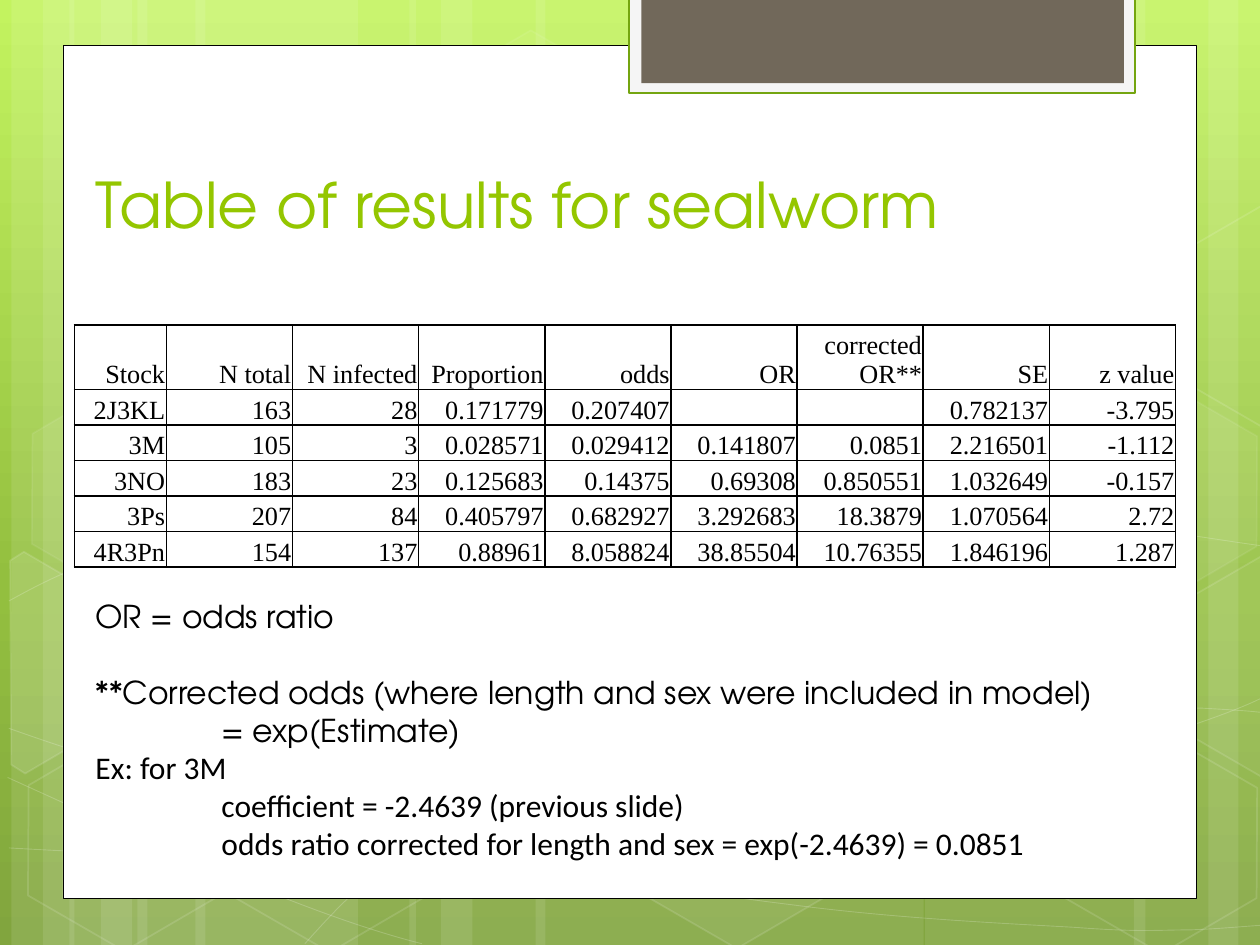
from copy import deepcopy
from lxml.etree import SubElement
from pptx import Presentation
from pptx.dml.color import RGBColor
from pptx.enum.shapes import MSO_SHAPE
from pptx.enum.text import MSO_ANCHOR, PP_ALIGN
from pptx.oxml.ns import qn
from pptx.util import Inches, Pt

WHITE = RGBColor(0xFF, 0xFF, 0xFF)
BLACK = RGBColor(0, 0, 0)
TITLE_GREEN = RGBColor(0x94, 0xC6, 0x00)
TAB_GREEN = RGBColor(0x74, 0xA5, 0x10)
TAB_GREY = RGBColor(0xF5, 0xF5, 0xF5)
TAB_BROWN = RGBColor(0x71, 0x68, 0x5A)
SKY = [(0, RGBColor(0xC3, 0xF3, 0x5F)), (0.62, RGBColor(0x93, 0xBF, 0x3F)),
       (1, RGBColor(0x81, 0xA5, 0x3E))]
HEADING_FONT = "TeX Gyre Adventor"


def paint(shape, fill=None, fill_alpha=100, line=None, width=1, line_alpha=100):
    shape.shadow.inherit = False
    for part, color, alpha in ((shape.fill, fill, fill_alpha), (shape.line.fill, line, line_alpha)):
        if color is None:
            part.background()
            continue
        part.solid()
        part.fore_color.rgb = color
        if alpha < 100:
            owner = shape._element.spPr if part is shape.fill else shape.line._ln
            tint = owner.find(qn("a:solidFill")).find(qn("a:srgbClr"))
            SubElement(tint, qn("a:alpha")).set("val", str(alpha * 1000))
    if line is not None:
        shape.line.width = Pt(width)


def outline(points, closed):
    corners = [(Inches(x), Inches(y)) for x, y in points]
    builder = slide.shapes.build_freeform(*corners[0])
    builder.add_line_segments(corners[1:], close=closed)
    return builder.convert_to_shape()


prs = Presentation()
prs.slide_width, prs.slide_height = Inches(10), Inches(7.5)
slide = prs.slides.add_slide(prs.slide_layouts[6])

sky = slide.background.fill
sky.gradient()
sky.gradient_angle = 270
stop_list = slide.background._cSld.find(".//" + qn("a:gsLst"))
stop_list.append(deepcopy(stop_list[-1]))
for stop, (position, color) in zip(sky.gradient_stops, SKY):
    stop.position = position
    stop.color.rgb = color

bands = [(1.09, 1.75), (0.09, 0.5), (0.34, 0.83), (1.55, 1.75), (0.55, 0.5), (0.8, 0.83),
         (7.34, 1.75), (9.59, 0.5), (9, 0.83), (4.25, 3.08), (3.25, 0.5), (3.5, 0.83)]
for left, width in bands:
    band = slide.shapes.add_shape(MSO_SHAPE.RECTANGLE, Inches(left), 0, Inches(width), Inches(7.5))
    paint(band, WHITE, 10)

waves = [
    [[(0.07, 6.73)], [(0.61, 6.76), (1.15, 6.79), (1.9, 6.78)], [(2.65, 6.77), (3.58, 6.75), (4.58, 6.65)],
     [(5.58, 6.55), (7, 6.36), (7.92, 6.17)], [(8.83, 5.98), (9.77, 5.68), (10.07, 5.51)]],
    [[(0.07, 4.77)], [(0.36, 4.61), (0.65, 4.46), (1.21, 4.31)], [(1.78, 4.16), (2.59, 3.94), (3.47, 3.87)],
     [(4.36, 3.8), (5.44, 3.79), (6.54, 3.87)], [(7.64, 3.95), (9.47, 4.26), (10.07, 4.34)]],
    [[(0.06, 6.17)], [(1.27, 6.72), (2.47, 7.27), (3.35, 7.49)]],
    [[(0.07, 5.78)], [(0.38, 5.89), (0.7, 6), (1.28, 6.16)], [(1.86, 6.31), (2.73, 6.56), (3.57, 6.73)],
     [(4.4, 6.9), (5.45, 7.08), (6.28, 7.18)], [(7.11, 7.29), (8, 7.33), (8.53, 7.36)],
     [(9.06, 7.4), (9.19, 7.38), (9.45, 7.38)], [(9.71, 7.37), (9.89, 7.35), (10.07, 7.34)]],
    [[(2.42, 7.49)], [(2.6, 7.29), (2.78, 7.09), (3.02, 6.91)], [(3.26, 6.72), (3.6, 6.53), (3.88, 6.39)],
     [(4.16, 6.25), (4.33, 6.19), (4.69, 6.09)], [(5.06, 5.99), (5.73, 5.85), (6.08, 5.78)],
     [(6.44, 5.71), (6.49, 5.71), (6.8, 5.69)], [(7.11, 5.66), (7.6, 5.63), (7.94, 5.62)],
     [(8.29, 5.61), (8.86, 5.62), (8.86, 5.62)], [(9.53, 5.62)],
     [(9.71, 5.63), (9.88, 5.64), (9.97, 5.65)], [(10.06, 5.66), (10.03, 5.65), (10.06, 5.66)]],
]
for segments in waves:
    wave = outline(sum(segments, []), False)
    track = wave._element.find(".//" + qn("a:path"))
    steps = iter(track.findall(qn("a:lnTo")))
    for segment in segments[1:]:
        pieces = [next(steps) for _ in segment]
        if len(pieces) == 3:
            bend = SubElement(track, qn("a:cubicBezTo"))
            for piece in pieces:
                bend.append(piece[0])
                track.remove(piece)
        else:
            track.append(pieces[0])
    paint(wave, line=WHITE, width=0.5, line_alpha=20)

hexagons = [(3.34, 0.36, 4, 8), (4.97, 5.89, 6, 12), (0.11, 5.91, 0, 12), (0.14, 3.12, 7, 8),
            (1.74, 5.92, 0, 12), (7.53, 4.53, 10, 12), (8.34, 5.93, 0, 12), (8.34, 3.14, 7, 8)]
for left, top, fill_alpha, line_alpha in hexagons:
    hexagon = slide.shapes.add_shape(MSO_SHAPE.HEXAGON, Inches(left), Inches(top), Inches(1.75), Inches(1.52))
    hexagon.adjustments[0] = 0.285
    hexagon.rotation = 30
    paint(hexagon, WHITE if fill_alpha else None, fill_alpha, WHITE, 1, line_alpha)

cut_hexagons = [
    ([(0.08, 4.45), (0.19, 4.38), (0.96, 4.83), (0.95, 5.7), (0.2, 6.14), (0.09, 6.07)], 10),
    ([(9.26, 4.85), (10.02, 4.41), (10.09, 4.46), (10.09, 6.13), (10.02, 6.17), (9.26, 5.73)], 4),
    ([(9.26, 2.07), (10.02, 1.63), (10.1, 1.68), (10.09, 3.35), (10.02, 3.39), (9.26, 2.95)], 0),
]
for corners, fill_alpha in cut_hexagons:
    paint(outline(corners, True), WHITE if fill_alpha else None, fill_alpha, WHITE, 1, 12)

panels = [((0.5, 0.36, 9, 6.77), WHITE, BLACK, 0.5),
          ((4.99, -0.02, 4.02, 0.76), TAB_GREY, TAB_GREEN, 1.25),
          ((5.09, -0.02, 3.83, 0.68), TAB_BROWN, None, 0)]
for box, fill, line, width in panels:
    panel = slide.shapes.add_shape(MSO_SHAPE.RECTANGLE, *map(Inches, box))
    paint(panel, fill, line=line, width=width)

title = slide.shapes.add_textbox(Inches(0.66), Inches(1.25), Inches(7.68), Inches(0.71)).text_frame
title.word_wrap = True
title.vertical_anchor = MSO_ANCHOR.BOTTOM
title.text = "Table of results for sealworm"
title_font = title.paragraphs[0].runs[0].font
title_font.name, title_font.size, title_font.color.rgb = HEADING_FONT, Pt(36), TITLE_GREEN

results = [
    ["Stock", "N total", "N infected", "Proportion", "odds", "OR", "corrected OR**", "SE", "z value"],
    ["2J3KL", "163", "28", "0.171779", "0.207407", "", "", "0.782137", "-3.795"],
    ["3M", "105", "3", "0.028571", "0.029412", "0.141807", "0.0851", "2.216501", "-1.112"],
    ["3NO", "183", "23", "0.125683", "0.14375", "0.69308", "0.850551", "1.032649", "-0.157"],
    ["3Ps", "207", "84", "0.405797", "0.682927", "3.292683", "18.3879", "1.070564", "2.72"],
    ["4R3Pn", "154", "137", "0.88961", "8.058824", "38.85504", "10.76355", "1.846196", "1.287"],
]
table = slide.shapes.add_table(6, 9, Inches(0.59), Inches(2.58), Inches(8.74), Inches(1.92)).table
table.first_row = table.horz_banding = False
for index, column in enumerate(table.columns):
    column.width = Inches(8.01) // 8 if index else Inches(0.73)
for index, row in enumerate(table.rows):
    row.height = Inches(1.41) // 5 if index else Inches(0.51)
for cell, value in zip(table.iter_cells(), sum(results, [])):
    cell.text = value
    cell.vertical_anchor = MSO_ANCHOR.BOTTOM
    cell.margin_left = cell.margin_right = cell.margin_top = Inches(0.01)
    cell.margin_bottom = 0
    paragraph = cell.text_frame.paragraphs[0]
    paragraph.alignment = PP_ALIGN.RIGHT
    paragraph._p.get_or_add_endParaRPr().set("sz", "1500")
    for run in paragraph.runs:
        run.font.name, run.font.size, run.font.color.rgb = "Times New Roman", Pt(15), BLACK
    properties = cell._tc.get_or_add_tcPr()
    for side in ("a:lnL", "a:lnR", "a:lnT", "a:lnB"):
        border = SubElement(properties, qn(side), w=str(Pt(1)))
        SubElement(SubElement(border, qn("a:solidFill")), qn("a:srgbClr")).set("val", str(BLACK))
    cell.fill.background()

notes = [("OR = odds ratio", HEADING_FONT, 0, 0),
         ("**Corrected odds (where length and sex were included in model)", HEADING_FONT, 0, 21.6),
         ("= exp(Estimate)", HEADING_FONT, 1, 0),
         ("Ex: for 3M", "Calibri", 0, 0),
         ("coefficient = -2.4639 (previous slide)", "Calibri", 1, 0),
         ("odds ratio corrected for length and sex = exp(-2.4639) = 0.0851", "Calibri", 1, 0)]
legend = slide.shapes.add_textbox(Inches(0.66), Inches(4.69), Inches(8.24), Inches(2.2)).text_frame
legend.word_wrap = False
legend.text = "\n".join(note[0] for note in notes)
for paragraph, (_, face, indent, gap) in zip(legend.paragraphs, notes):
    paragraph.space_before = Pt(gap)
    paragraph._p.get_or_add_pPr().set("marL", str(Inches(indent)))
    font = paragraph.runs[0].font
    font.name, font.size, font.color.rgb = face, Pt(18), BLACK

prs.save("out.pptx")
